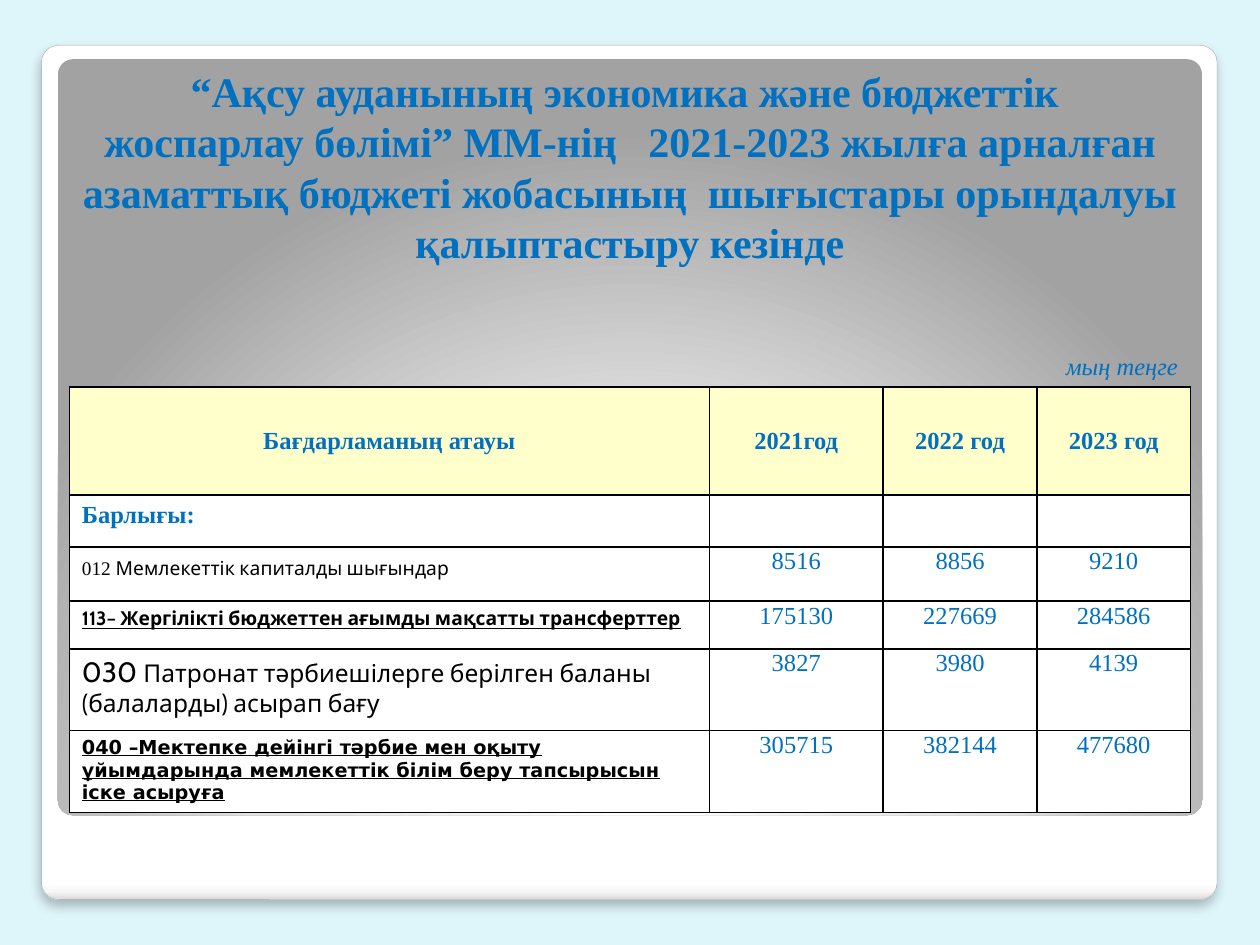
from lxml import etree
from pptx import Presentation
from pptx import util as u
from pptx.dml.color import RGBColor
from pptx.enum import shapes, text
from pptx.oxml.ns import nsdecls, qn

THEME = dict(
    back="DEF5FA", blue="0070C0", black="000000", white="FFFFFF", cream="FFFFCC", edge="A4A4A4",
    serif="Times New Roman", sans="Cabin", wide="DejaVu Sans",
    big=24, mid=16, base=14, small=11)
ALIGN = text.PP_ALIGN
ANCHOR = text.MSO_ANCHOR


def style(run, **form):
    """Format a run; blue serif base type unless told otherwise."""
    look = dict(name=THEME["serif"], size=THEME["base"], color=THEME["blue"], bold=False) | form
    run.font.color.rgb = RGBColor.from_string(look.pop("color"))
    look["size"] = u.Pt(look["size"])
    for key, val in look.items():
        setattr(run.font, key, val)


def add(parent, body, spot=None):
    """Put a drawing element into parent, at spot or at the end."""
    head, rest = body.split(">", 1) if "/>" not in body.split(">", 1)[0] + ">" else body.split("/>", 1)
    tail = ">" if body[len(head):len(head) + 1] == ">" else "/>"
    node = etree.fromstring(f"{head} {nsdecls('a')}{tail}{rest}")
    parent.insert(len(parent) if spot is None else spot, node)


prs = Presentation()
prs.slide_width, prs.slide_height = u.Inches(10), u.Inches(7.5)
slide = prs.slides.add_slide(prs.slide_layouts[5])
slide.background.fill.solid()
slide.background.fill.fore_color.rgb = RGBColor.from_string(THEME["back"])

# Rounded panels: white card, then grey glow
panels = [
    ((0.33, 0.36, 9.33, 6.78), [(0, "FFFFFF"), (98, "FFFFFF"), (99, "F7F7F7"), (100, "DADADA")],
     '<a:lin ang="5400000" scaled="0"/>'),
    ((0.46, 0.47, 9.08, 6), [(0, "FFFFFF"), (55, "E1E1E1"), (100, "A2A2A2")],
     '<a:path path="circle"><a:fillToRect l="50000" t="175000" r="50000" b="-75000"/></a:path>'),
]
cards = []
for box, stops, shade in panels:
    card = slide.shapes.add_shape(shapes.MSO_SHAPE.ROUNDED_RECTANGLE, *map(u.Inches, box))
    card.adjustments[0] = 0.02
    card.shadow.inherit = False
    card.line.fill.background()
    marks = "".join(f'<a:gs pos="{pos * 1000}"><a:srgbClr val="{tint}"/></a:gs>' for pos, tint in stops)
    add(card._element.spPr, f"<a:gradFill><a:gsLst>{marks}</a:gsLst>{shade}</a:gradFill>", 2)
    cards.append(card)
cards[0].line.color.rgb = RGBColor.from_string(THEME["edge"])
cards[0].line.width = u.Pt(0.16)
add(cards[0]._element.spPr.find(qn("a:effectLst")),
    '<a:outerShdw blurRad="76200" dist="50800" dir="5400000"><a:srgbClr val="000000">'
    '<a:alpha val="25000"/></a:srgbClr></a:outerShdw>')

# Title, moved in front of the panels
title = slide.shapes.title
slide.shapes._spTree.append(title._element)
for key, val in dict(left=0.47, top=0.44, width=9.06, height=1.73).items():
    setattr(title, key, u.Inches(val))
frame = title.text_frame
frame.text = ("“Ақсу ауданының экономика және бюджеттік \vжоспарлау бөлімі” ММ-нің   2021-2023 жылға "
              "арналған азаматтық бюджеті жобасының  шығыстары орындалуы қалыптастыру кезінде")
for key, val in dict(auto_size=text.MSO_AUTO_SIZE.NONE, vertical_anchor=ANCHOR.BOTTOM, word_wrap=True).items():
    setattr(frame, key, val)
frame.paragraphs[0].alignment = ALIGN.CENTER
for run in frame.paragraphs[0].runs:
    style(run, size=THEME["big"], bold=True)

# Table content: label runs with their format, then the yearly values
head = dict(bold=True)
plain = dict(name=THEME["sans"], size=THEME["small"], color=THEME["black"])
strong = plain | dict(bold=True, underline=True)
rows = [
    ([("Бағдарламаның атауы", head)], ["2021год", "2022 год", "2023 год"]),
    ([("Барлығы:", head)], ["", "", ""]),
    ([("012 ", plain | dict(name=THEME["serif"])), ("Мемлекеттік капиталды шығындар", plain)],
     ["8516", "8856", "9210"]),
    ([("113– Жергілікті бюджеттен ағымды мақсатты трансферттер", strong)],
     ["175130", "227669", "284586"]),
    ([("030 ", plain | dict(size=THEME["mid"])),
      ("Патронат тәрбиешілерге берілген баланы (балаларды) асырап бағу", plain | dict(size=THEME["base"]))],
     ["3827", "3980", "4139"]),
    ([("040 –Мектепке дейінгі тәрбие мен оқыту ұйымдарында мемлекеттік білім беру тапсырысын іске асыруға",
       strong | dict(name=THEME["wide"]))], ["305715", "382144", "477680"]),
]
widths = [5.08, 1.38, 1.22, 1.22]
heights = [0.65, 0.86, 0.41, 0.43, 0.38, 0.65, 0.65]
table = slide.shapes.add_table(len(heights), len(widths), *map(u.Inches, (0.55, 2.42, 8.9, 4.03))).table
table.first_row = table.horz_banding = False
for col, wide in zip(table.columns, widths):
    col.width = u.Inches(wide)
for row, high in zip(table.rows, heights):
    row.height = u.Inches(high)

# Unit note above the last two columns
note = table.cell(0, 2)
note.merge(table.cell(0, 3))
note.vertical_anchor = ANCHOR.BOTTOM
para = note.text_frame.paragraphs[0]
para.alignment = ALIGN.RIGHT
run = para.add_run()
run.text = "мың теңге"
style(run, italic=True)

# Header and body rows
for r, (label, vals) in enumerate(rows, 1):
    for c, parts in enumerate([label] + [[(val, head if r == 1 else {})] for val in vals]):
        cell = table.cell(r, c)
        para = cell.text_frame.paragraphs[0]
        if r == 1:
            cell.vertical_anchor = ANCHOR.MIDDLE
        if r == 1 or c:
            para.alignment = ALIGN.CENTER
        if r > 2 and c:
            for side, gap in dict(left=0.01, right=0.01, top=0.01, bottom=0).items():
                setattr(cell, f"margin_{side}", u.Inches(gap))
        if c == 0 and r in (3, 4, 5):
            para.space_before = u.Pt(2.2)
        if c == 0 and r == 3:
            para.line_spacing = 1.15
        for words, form in parts:
            if words:
                run = para.add_run()
                run.text = words
                style(run, **form)

# Cell fills and borders: the note row keeps only its lower line
for r, row in enumerate(table.rows):
    for cell in row.cells:
        props = cell._tc.get_or_add_tcPr()
        for side in "LRTB":
            paint = '<a:solidFill><a:srgbClr val="000000"/></a:solidFill>' if r or side == "B" else "<a:noFill/>"
            add(props, f'<a:ln{side} w="12700">{paint}</a:ln{side}>')
        if r:
            cell.fill.solid()
            cell.fill.fore_color.rgb = RGBColor.from_string(THEME["cream" if r == 1 else "white"])
        else:
            cell.fill.background()

prs.save("out.pptx")
